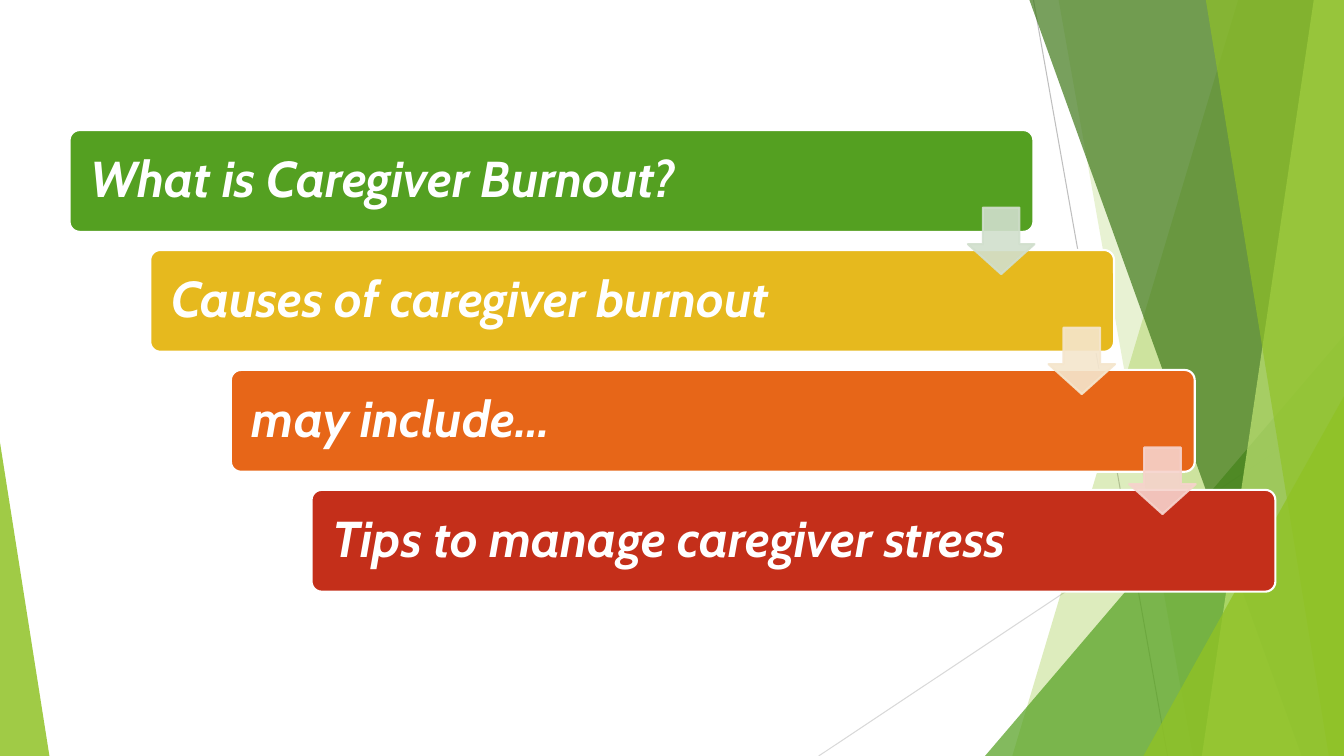
"""Build a slide with four stepped topic bars over green facets."""
import pptx
import pptx.util
import pptx.dml.color
import pptx.enum.shapes
import pptx.enum.text
import lxml.etree

Inch = pptx.util.Inches
Rgb = pptx.dml.color.RGBColor.from_string
Kind = pptx.enum.shapes.MSO_SHAPE
NS = "http://schemas.openxmlformats.org/drawingml/2006/main"
WIDE, HIGH = 13.33, 7.5
HUES = {
    "white": "FFFFFF", "gray": "BFBFBF", "pale": "D9D9D9",
    "lime": "90C226", "green": "54A021", "dark": "3F7819", "light": "C0E474",
    "gold": "E6B91E", "orange": "E76618", "red": "C42F1A",
    "mint": "D1DFCD", "cream": "F5E6CD", "pink": "F6D3CC",
}


def paint(shape, hue, alpha=100, edge=None):
    """Fill and outline a shape, with the given opacity."""
    shape.shadow.inherit = False
    shape.fill.solid()
    shape.fill.fore_color.rgb = Rgb(HUES[hue])
    if edge:
        shape.line.color.rgb = Rgb(HUES[edge])
        shape.line.width = pptx.util.Pt(1.5)
    else:
        shape.line.fill.background()
    if alpha < 100:
        for color in shape._element.spPr.iter(f"{{{NS}}}srgbClr"):
            lxml.etree.SubElement(color, f"{{{NS}}}alpha", val=str(alpha * 1000))


def write(shape, text, size=36, font="Cabin", hue="white", inset=0.18):
    """Put one line of bold italic text in a shape."""
    frame = shape.text_frame
    frame.word_wrap = True
    frame.vertical_anchor = pptx.enum.text.MSO_ANCHOR.MIDDLE
    frame.margin_left = frame.margin_right = Inch(inset)
    frame.margin_top = frame.margin_bottom = Inch(inset)
    para = frame.paragraphs[0]
    para.alignment = pptx.enum.text.PP_ALIGN.LEFT
    para.line_spacing = 0.9
    run = para.add_run()
    run.text = text
    run.font.name = font
    run.font.size = pptx.util.Pt(size)
    run.font.bold = run.font.italic = True
    run.font.color.rgb = Rgb(HUES[hue])


deck = pptx.Presentation()
deck.slide_width, deck.slide_height = Inch(WIDE), Inch(HIGH)
slide = deck.slides.add_slide(deck.slide_layouts[6])
shapes = slide.shapes

rays = [
    (10.25, 0, 11.58, HIGH, "gray"),
    (WIDE, 4.03, 8.12, HIGH, "pale"),
]
for *ends, hue in rays:
    ray = shapes.add_connector(
        pptx.enum.shapes.MSO_CONNECTOR.STRAIGHT, *map(Inch, ends))
    ray.line.color.rgb = Rgb(HUES[hue])
    ray.line.width = pptx.util.Pt(0.75)
    lxml.etree.SubElement(ray._element.spPr, f"{{{NS}}}effectLst")

bands = [
    (12.28, 10.04, "lime", 30),
    (10.5, 11.83, "lime", 20),
    (9.77, 3.33, "green", 72, 1),
    (10.21, 12.91, "dark", 70),
    (13.03, 11.92, "light", 70),
    (11.96, 13.18, "lime", 65),
    (11.34, 3.93, "lime", 80, 1),
    (0, 4.39, "lime", 85, 0),
]
for start, end, hue, alpha, *peak in bands:
    if peak:
        span = WIDE - start if peak[0] else 0.49
        facet = shapes.add_shape(
            Kind.ISOSCELES_TRIANGLE, Inch(start), Inch(end),
            Inch(span), Inch(HIGH - end))
        facet.adjustments[0] = peak[0]
    else:
        pen = shapes.build_freeform(Inch(start), 0)
        edges = [(WIDE, 0), (WIDE, HIGH), (end, HIGH)]
        pen.add_line_segments([(Inch(x), Inch(y)) for x, y in edges])
        facet = pen.convert_to_shape()
    paint(facet, hue, alpha)

LEFT, TOP = 0.69, 1.29
COL, ROW = 0.8, 1.19
topics = [
    ("What is Caregiver Burnout?", "green"),
    ("Causes of caregiver burnout", "gold"),
    ("may include…", "orange"),
    ("Tips to manage caregiver stress", "red"),
]
for step, (text, hue) in enumerate(topics):
    bar = shapes.add_shape(
        Kind.ROUNDED_RECTANGLE, Inch(LEFT + step * COL),
        Inch(TOP + step * ROW), Inch(9.56), Inch(1.01))
    bar.adjustments[0] = 0.1
    paint(bar, hue, edge="white")
    write(bar, text)

for step, hue in enumerate(["mint", "cream", "pink"]):
    arrow = shapes.add_shape(
        Kind.DOWN_ARROW, Inch(LEFT + 8.91 + step * COL),
        Inch(TOP + 0.77 + step * ROW), Inch(0.66), Inch(0.66))
    arrow.adjustments[0] = 0.55
    arrow.adjustments[1] = 0.45
    paint(arrow, hue, 90, edge=hue)

deck.save("out.pptx")
